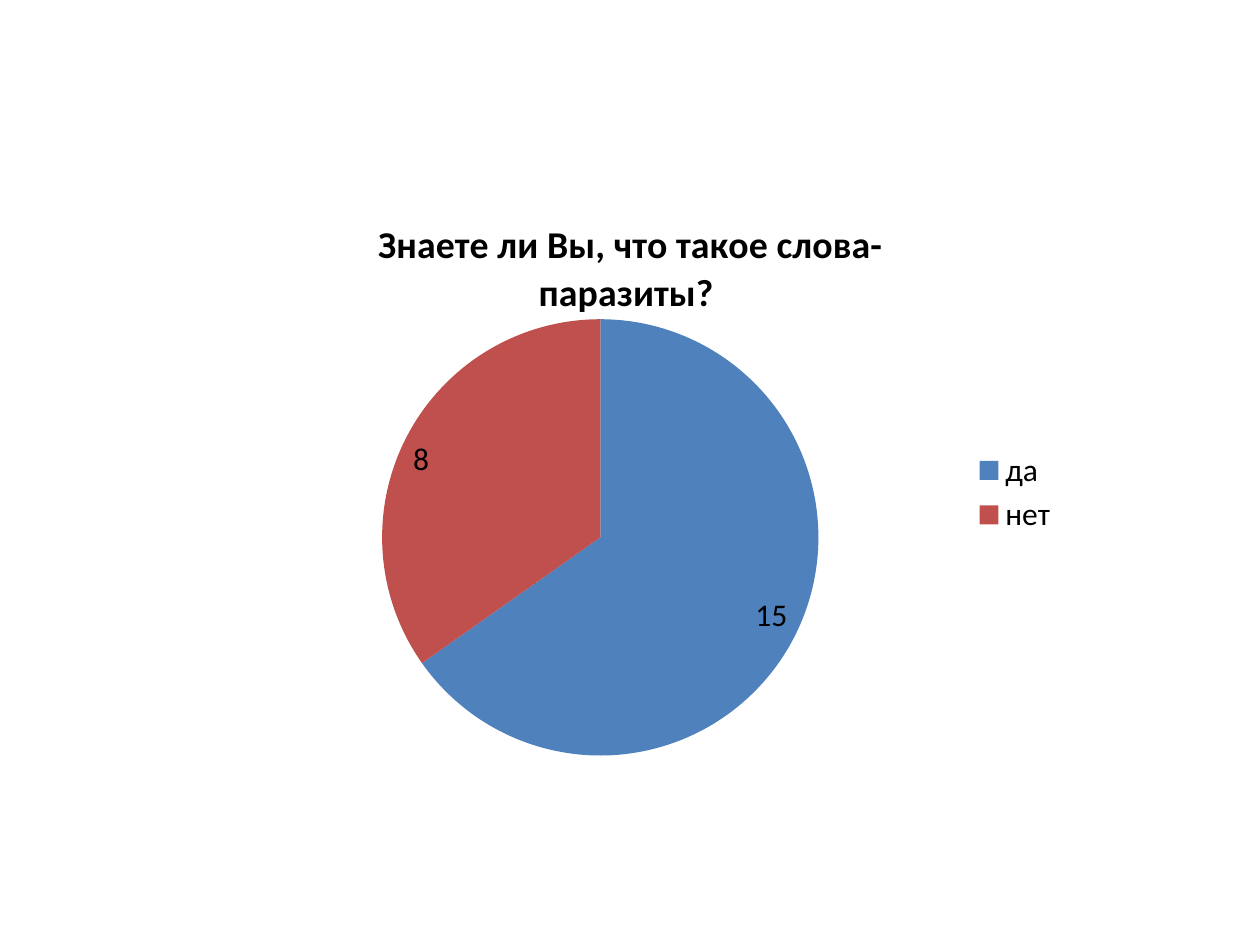
from lxml import etree
from pptx import Presentation
from pptx.chart.data import CategoryChartData
from pptx.dml.color import RGBColor
from pptx.enum import chart as ch
from pptx.oxml import ns
from pptx.util import Inches, Pt

COLORS = {"text": "000000", "yes": "4F81BD", "no": "C0504D"}
SLICES = ("yes", "no")
FONT = {"name": "Calibri", "size": Pt(18), "bold": False}
TITLE_FONT = {"name": "Calibri", "size": Pt(21.6), "bold": True}
QUESTION = "Знаете ли Вы, что такое слова-паразиты? "
CHARTS = [
    {"at": (1.67, 1.53, 6.67, 4.44), "title": QUESTION, "series": QUESTION,
     "cats": ("1", "2", "3", "4"), "vals": (0, 0, None, None), "answers": False},
    {"at": (1.83, 1.69, 6.67, 4.44), "title": " ", "series": "Series 1",
     "cats": ("да", "нет"), "vals": (15, 8), "answers": True},
]
PIE_LAYOUT = {"layoutTarget": "inner", "xMode": "edge", "yMode": "edge",
              "x": 0.18, "y": 0.19, "w": 0.52, "h": 0.78}


def style(font, values):
    for name, value in values.items():
        setattr(font, name, value)
    font.color.rgb = RGBColor.from_string(COLORS["text"])


def place_pie(chart):
    area = chart._chartSpace.chart.plotArea
    for old in area.findall(ns.qn("c:layout")):
        area.remove(old)
    layout = etree.Element(ns.qn("c:layout"))
    manual = etree.SubElement(layout, ns.qn("c:manualLayout"))
    for name, value in PIE_LAYOUT.items():
        etree.SubElement(manual, ns.qn(f"c:{name}")).set("val", str(value))
    area.insert(0, layout)


def show_answers(chart):
    place_pie(chart)
    chart.has_legend = True
    chart.legend.position = ch.XL_LEGEND_POSITION.RIGHT
    chart.legend.include_in_layout = False
    style(chart.legend.font, FONT)
    labels = chart.plots[0].series[0].data_labels
    labels.show_value = True
    labels.position = ch.XL_LABEL_POSITION.INSIDE_END
    style(labels.font, FONT)


def add_pie(s, item):
    data = CategoryChartData()
    data.categories = item["cats"]
    data.add_series(item["series"], item["vals"])
    chart = s.shapes.add_chart(
        ch.XL_CHART_TYPE.PIE, *map(Inches, item["at"]), data).chart
    style(chart.font, FONT)
    chart.has_title = True
    tf = chart.chart_title.text_frame
    tf.text = item["title"]
    style(tf.paragraphs[0].runs[0].font, TITLE_FONT)
    chart.has_legend = False
    plot = chart.plots[0]
    plot.vary_by_categories = True
    for i, name in enumerate(SLICES):
        fill = plot.series[0].points[i].format.fill
        fill.solid()
        fill.fore_color.rgb = RGBColor.from_string(COLORS[name])
    if item["answers"]:
        show_answers(chart)


prs = Presentation()
prs.slide_width, prs.slide_height = Inches(10), Inches(7.5)
s = prs.slides.add_slide(prs.slide_layouts[6])
for item in CHARTS:
    add_pie(s, item)
prs.save("out.pptx")
